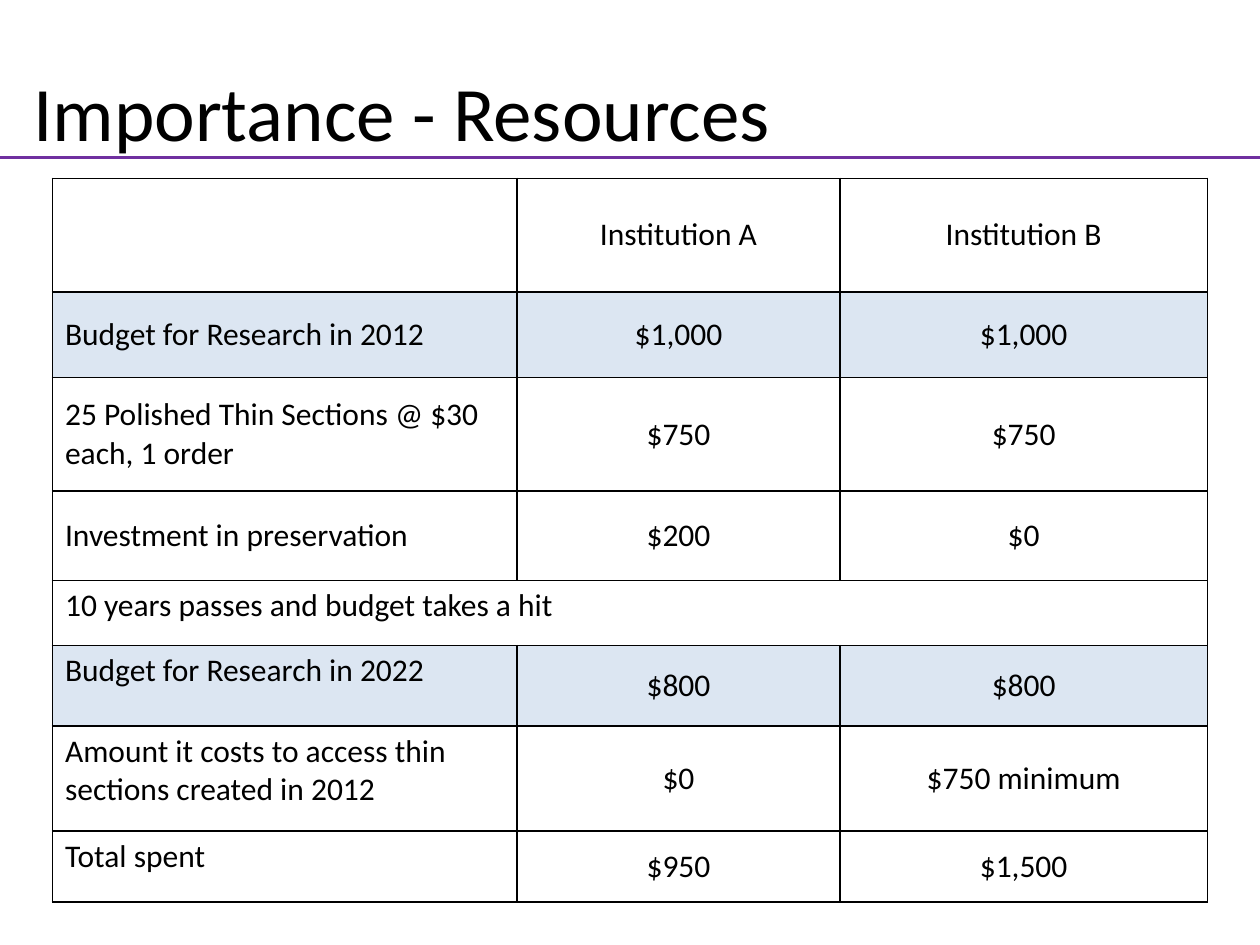
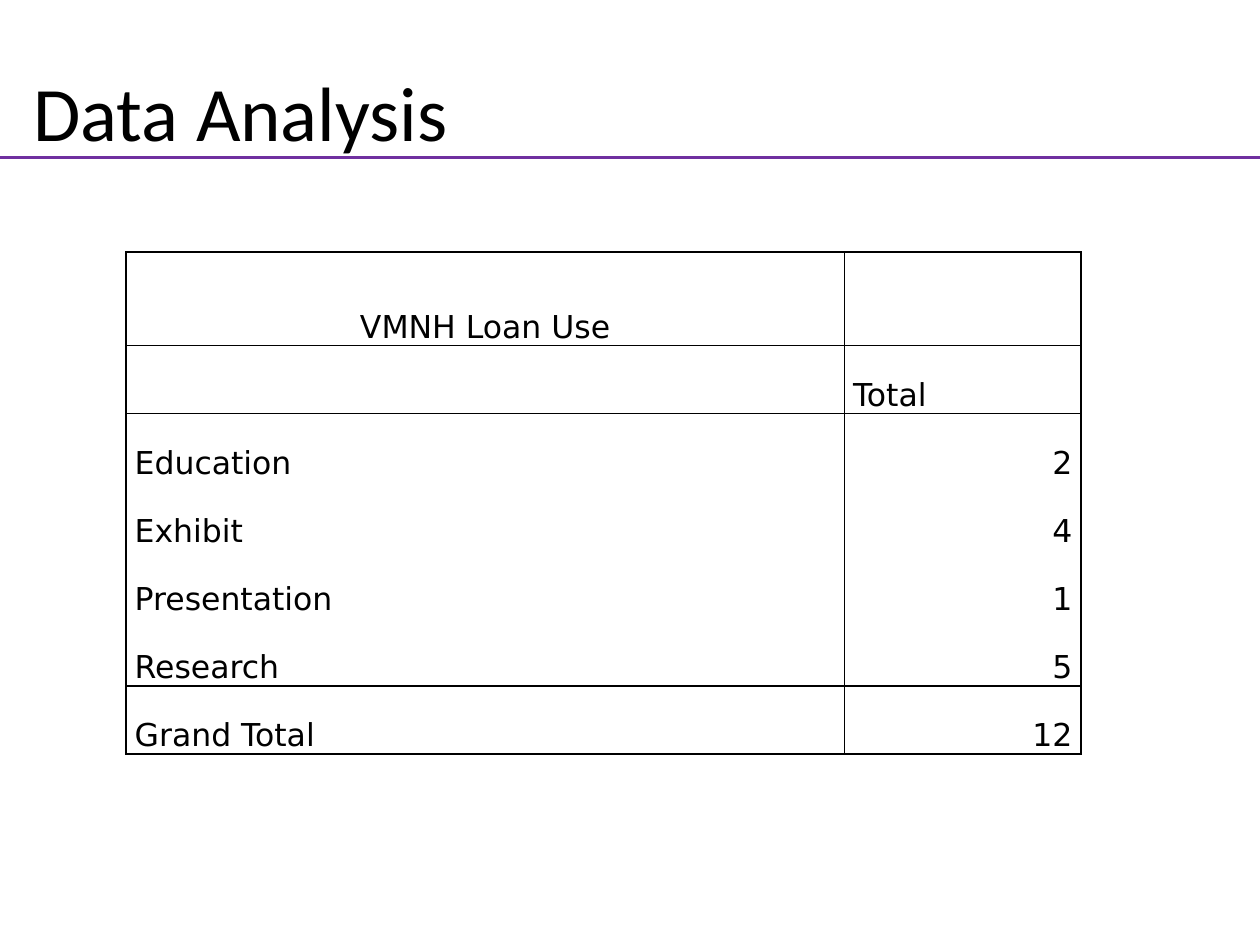
from dataclasses import dataclass

from lxml import etree
from pptx import Presentation
from pptx.dml.color import RGBColor
from pptx.enum.shapes import MSO_CONNECTOR
from pptx.enum.text import MSO_ANCHOR, PP_ALIGN
from pptx.oxml.ns import qn
from pptx.util import Pt

LEFT, CENTER, RIGHT = PP_ALIGN.LEFT, PP_ALIGN.CENTER, PP_ALIGN.RIGHT
TOP, MIDDLE, BOTTOM = MSO_ANCHOR.TOP, MSO_ANCHOR.MIDDLE, MSO_ANCHOR.BOTTOM
STRAIGHT = MSO_CONNECTOR.STRAIGHT
BLANK_LAYOUT = 6
SLIDE_WIDTH, SLIDE_HEIGHT = 720, 540
ALL_SIDES = "LRTB"


@dataclass(frozen=True)
class Theme:
    ink: str = "000000"
    paper: str = "FFFFFF"
    rule: str = "7030A0"
    highlight: str = "DCE6F2"
    font: str = "Calibri"
    data_font: str = "DejaVu Sans"
    title_size: int = 44
    table_size: int = 18
    rule_width: int = 2
    border_width: int = 1


class Deck:
    def __init__(self, theme):
        self.theme = theme
        self.presentation = Presentation()
        self.presentation.slide_width = Pt(SLIDE_WIDTH)
        self.presentation.slide_height = Pt(SLIDE_HEIGHT)
        self.slide = None

    def add_slide(self, title):
        layout = self.presentation.slide_layouts[BLANK_LAYOUT]
        self.slide = self.presentation.slides.add_slide(layout)
        self.title(title)
        self.title_rule()

    def title(self, text):
        heading = self.slide.shapes.add_textbox(Pt(12), Pt(18), Pt(648), Pt(90))
        frame = heading.text_frame
        frame.word_wrap = True
        frame.vertical_anchor = MIDDLE
        self.set_text(frame, text, self.theme.font, self.theme.title_size, LEFT)

    def title_rule(self):
        rule = self.slide.shapes.add_connector(
            STRAIGHT, Pt(0), Pt(90), Pt(SLIDE_WIDTH), Pt(90))
        rule.line.color.rgb = RGBColor.from_string(self.theme.rule)
        rule.line.width = Pt(self.theme.rule_width)
        etree.SubElement(rule.element.spPr, qn("a:effectLst"))

    def set_text(self, frame, text, font, size, align):
        frame.text = text
        paragraph = frame.paragraphs[0]
        paragraph.alignment = align
        for run in paragraph.runs:
            run.font.name = font
            run.font.size = Pt(size)
            run.font.color.rgb = RGBColor.from_string(self.theme.ink)

    def table(self, left, top, widths, heights):
        """Add an empty, unstyled table and return it."""
        table = self.slide.shapes.add_table(
            len(heights), len(widths), Pt(left), Pt(top),
            Pt(sum(widths)), Pt(sum(heights))).table
        table.first_row = table.horz_banding = False
        for column, width in zip(table.columns, widths):
            column.width = Pt(width)
        for row, height in zip(table.rows, heights):
            row.height = Pt(height)
        return table

    def cell(self, cell, text, align, anchor, font, fill, sides=ALL_SIDES):
        self.set_text(cell.text_frame, text, font, self.theme.table_size, align)
        cell.vertical_anchor = anchor
        self.borders(cell, sides)
        cell.fill.solid()
        cell.fill.fore_color.rgb = RGBColor.from_string(fill)

    def borders(self, cell, sides):
        """Draw the named sides and hide the others; call before filling."""
        properties = cell._tc.get_or_add_tcPr()
        for side in ALL_SIDES:
            line = etree.SubElement(properties, qn(f"a:ln{side}"),
                                    w=str(Pt(self.theme.border_width)))
            if side in sides:
                solid = etree.SubElement(line, qn("a:solidFill"))
                etree.SubElement(solid, qn("a:srgbClr"), val=self.theme.ink)
            else:
                etree.SubElement(line, qn("a:noFill"))


def resources_slide(deck):
    theme = deck.theme
    budget_rows = [
        ("", "Institution A", "Institution B"),
        ("Budget for Research in 2012", "$1,000", "$1,000"),
        ("25 Polished Thin Sections @ $30 each, 1 order", "$750", "$750"),
        ("Investment in preservation", "$200", "$0"),
        ("10 years passes and budget takes a hit", "", ""),
        ("Budget for Research in 2022", "$800", "$800"),
        ("Amount it costs to access thin sections created in 2012",
         "$0", "$750 minimum"),
        ("Total spent", "$950", "$1,500"),
    ]
    cut_row = 4
    deck.add_slide("Importance - Resources")
    table = deck.table(30, 102, (265.5, 184.5, 210),
                       (64.8, 49, 64.8, 51.2, 37.2, 46, 60, 40.5))
    for r, entries in enumerate(budget_rows):
        fill = theme.highlight if entries[0].startswith("Budget") else theme.paper
        for c, text in enumerate(entries):
            deck.cell(table.cell(r, c), text,
                      CENTER if c else LEFT,
                      TOP if c == 0 and r >= cut_row else MIDDLE,
                      theme.font, fill)
    table.cell(cut_row, 0).merge(table.cell(cut_row, 2))


def loans_slide(deck):
    theme = deck.theme
    loan_uses = [("Education", 2), ("Exhibit", 4), ("Presentation", 1), ("Research", 5)]
    total = sum(count for _, count in loan_uses)
    loan_rows = [("VMNH Loan Use", ""), ("", "Total"), *loan_uses, ("Grand Total", total)]
    first_use, last_use = 2, 1 + len(loan_uses)

    deck.add_slide("Data Analysis")
    table = deck.table(72, 144, (410.5, 135.3), (53.5, *[38.9] * (len(loan_rows) - 1)))
    for r, entries in enumerate(loan_rows):
        sides = ALL_SIDES
        if first_use < r <= last_use:
            sides = sides.replace("T", "")
        if first_use <= r < last_use:
            sides = sides.replace("B", "")
        for c, entry in enumerate(entries):
            if r == 0:
                align = CENTER
            else:
                align = RIGHT if isinstance(entry, int) else LEFT
            cell = table.cell(r, c)
            deck.cell(cell, str(entry), align, BOTTOM,
                      theme.data_font, theme.paper, sides)
            cell.margin_left = cell.margin_right = Pt(5)
            cell.margin_top = cell.margin_bottom = Pt(0)


def main():
    deck = Deck(Theme())
    resources_slide(deck)
    loans_slide(deck)
    deck.presentation.save("out.pptx")


if __name__ == "__main__":
    main()
